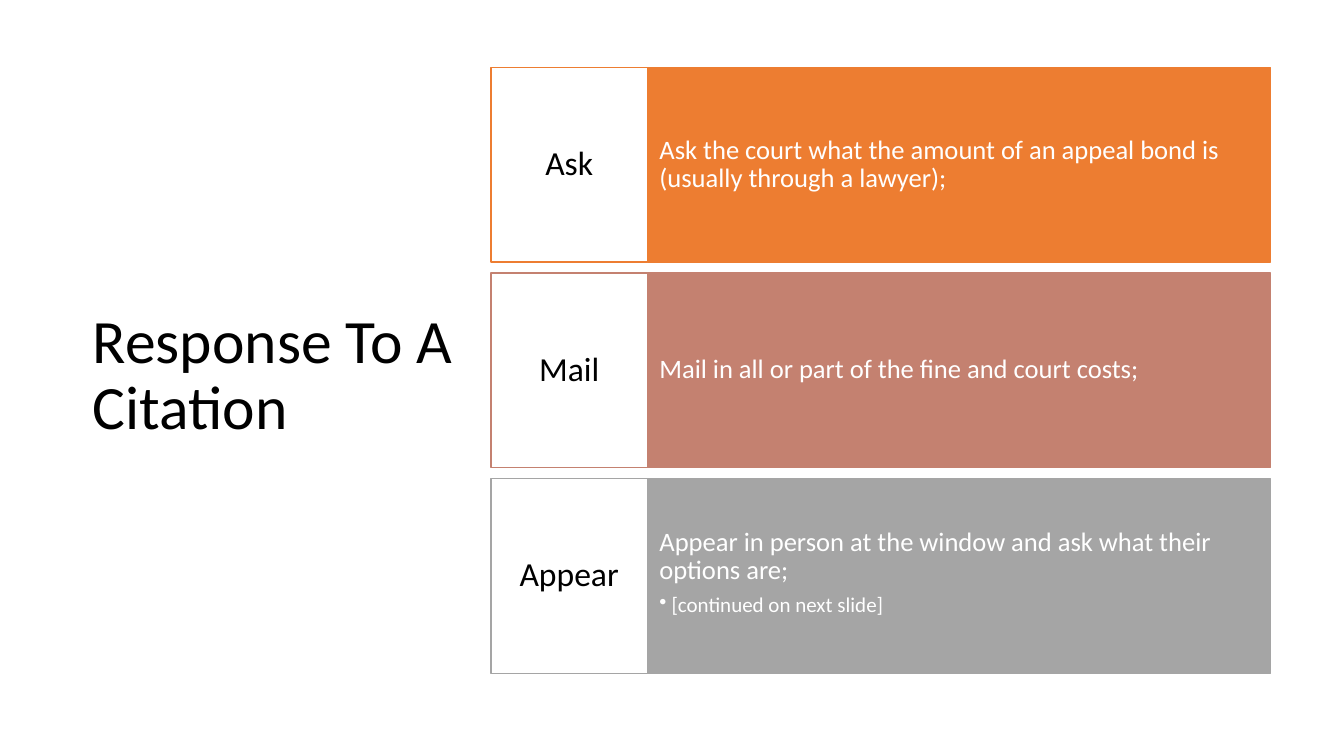
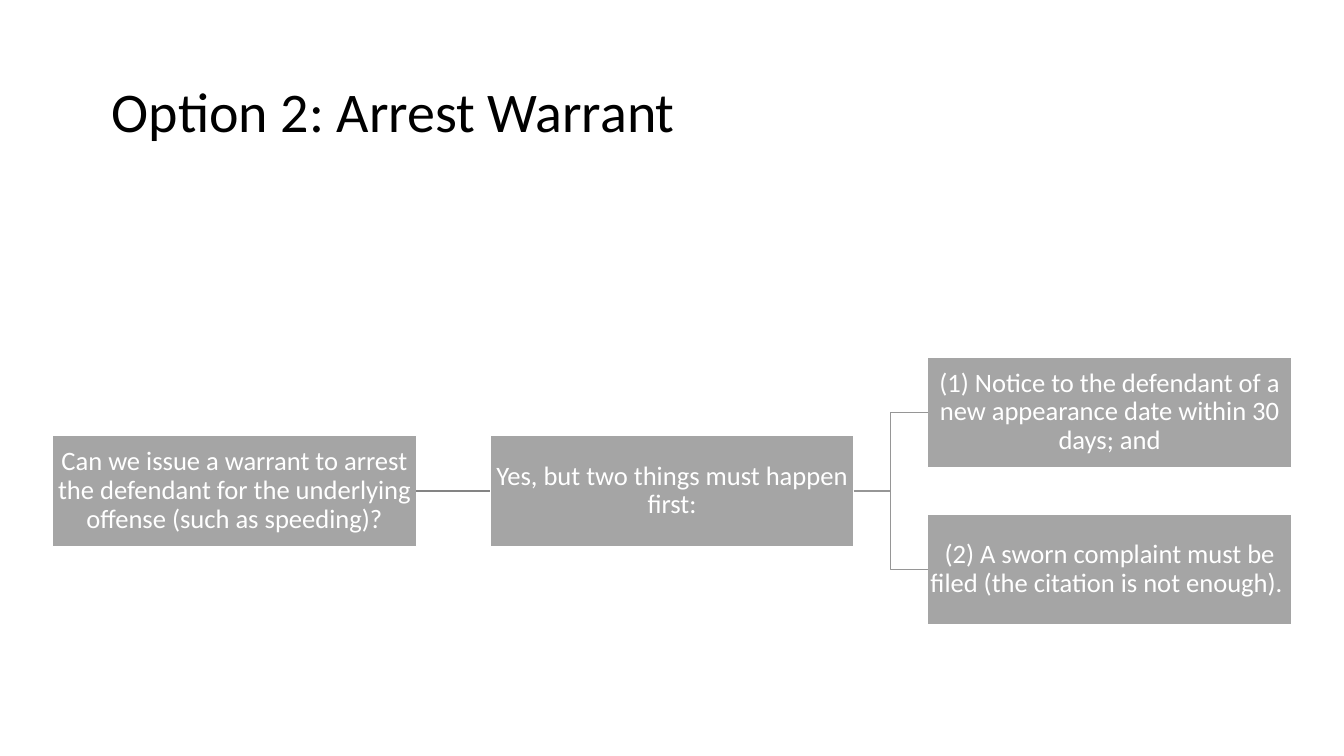
from lxml.etree import SubElement
from pptx import Presentation
from pptx.dml.color import RGBColor
from pptx.enum.shapes import MSO_CONNECTOR, MSO_SHAPE
from pptx.enum.text import MSO_ANCHOR, PP_ALIGN
from pptx.oxml.ns import qn
from pptx.util import Inches, Pt

FONT = "Calibri"
BLACK, WHITE = "000000", "FFFFFF"
ORANGE, ROSE, GRAY = "ED7D31", "C48170", "A5A5A5"
STEM, BRANCH = "848484", "969696"
LINE_SPACING = 0.9
LEFT_SITE, RIGHT_SITE = 1, 3

RESPONSES = [
    ("Ask", ORANGE,
     "Ask the court what the amount of an appeal bond is (usually through a lawyer);", None),
    ("Mail", ROSE, "Mail in all or part of the fine and court costs;", None),
    ("Appear", GRAY, "Appear in person at the window and ask what their options are;",
     "[continued on next slide]"),
]


def color(hex_code):
    return RGBColor.from_string(hex_code)


def write(paragraph, text, size, hex_code, align=PP_ALIGN.LEFT):
    paragraph.alignment = align
    paragraph.line_spacing = LINE_SPACING
    run = paragraph.add_run()
    run.text = text
    run.font.name = FONT
    run.font.size = Pt(size)
    run.font.color.rgb = color(hex_code)


def add_titled_slide(deck, text, size, left, top, width, height):
    slide = deck.slides.add_slide(deck.slide_layouts[5])
    title = slide.shapes.title
    title.left, title.top = Inches(left), Inches(top)
    title.width, title.height = Inches(width), Inches(height)
    title.text_frame.vertical_anchor = MSO_ANCHOR.MIDDLE
    write(title.text_frame.paragraphs[0], text, size, BLACK)
    return slide


def add_box(slide, left, top, width, height, fill, outline, insets):
    """Add a flat rectangle; insets are (horizontal, vertical) in inches."""
    box = slide.shapes.add_shape(MSO_SHAPE.RECTANGLE, Inches(left), Inches(top),
                                 Inches(width), Inches(height))
    box.shadow.inherit = False
    box.fill.solid()
    box.fill.fore_color.rgb = color(fill)
    box.line.color.rgb = color(outline)
    box.line.width = Pt(1)
    frame = box.text_frame
    frame.word_wrap = True
    frame.vertical_anchor = MSO_ANCHOR.MIDDLE
    frame.margin_left = frame.margin_right = Inches(insets[0])
    frame.margin_top = frame.margin_bottom = Inches(insets[1])
    return box


def add_bullet(frame, text):
    frame.paragraphs[-1].space_after = Pt(6)
    paragraph = frame.add_paragraph()
    write(paragraph, text, 15, WHITE)
    properties = paragraph._p.get_or_add_pPr()
    properties.set("marL", str(Inches(0.12)))
    properties.set("indent", str(Inches(-0.12)))
    SubElement(properties, qn("a:buChar"), char="•")


def add_response(slide, top, label, accent, detail, note):
    left, label_width, detail_width, height = 4.87, 1.55, 6.18, 1.93
    detail_box = add_box(slide, left + label_width, top, detail_width, height,
                         accent, accent, (0.12, 0.49))
    write(detail_box.text_frame.paragraphs[0], detail, 19, WHITE)
    if note:
        detail_box.text_frame.vertical_anchor = MSO_ANCHOR.TOP
        add_bullet(detail_box.text_frame, note)
    label_box = add_box(slide, left, top, label_width, height, WHITE, accent, (0.08, 0.19))
    write(label_box.text_frame.paragraphs[0], label, 24, BLACK, PP_ALIGN.CENTER)


def add_step(slide, column, top, text):
    step = add_box(slide, 0.52 + column * 4.34, top, 3.61, 1.1, GRAY, WHITE, (0.01, 0.01))
    write(step.text_frame.paragraphs[0], text, 19, WHITE, PP_ALIGN.CENTER)
    return step


def join(slide, source, target, route, hex_code):
    """Link the right side of source to the left side of target."""
    link = slide.shapes.add_connector(route, 0, 0, 0, 0)
    link.begin_connect(source, RIGHT_SITE)
    link.end_connect(target, LEFT_SITE)
    link.line.color.rgb = color(hex_code)
    link.line.width = Pt(1)
    SubElement(link._element.spPr, qn("a:effectLst"))


def build_response_slide(deck):
    slide = add_titled_slide(deck, "Response To A Citation", 44, 0.82, 0.67, 3.98, 6.13)
    for row, response in enumerate(RESPONSES):
        add_response(slide, 0.67 + row * 2.04, *response)


def build_warrant_slide(deck):
    slide = add_titled_slide(deck, "Option 2: Arrest Warrant", 40, 1.01, 0.41, 11.32, 1.45)
    question = add_step(slide, 0, 4.32, "Can we issue a warrant to arrest the defendant "
                                        "for the underlying offense (such as speeding)?")
    answer = add_step(slide, 1, 4.32, "Yes, but two things must happen first:")
    notice = add_step(slide, 2, 3.54, "(1) Notice to the defendant of a new appearance "
                                      "date within 30 days; and")
    complaint = add_step(slide, 2, 5.1, "(2) A sworn complaint must be filed "
                                        "(the citation is not enough). ")
    join(slide, question, answer, MSO_CONNECTOR.STRAIGHT, STEM)
    for condition in (notice, complaint):
        join(slide, answer, condition, MSO_CONNECTOR.ELBOW, BRANCH)


def main():
    deck = Presentation()
    deck.slide_width, deck.slide_height = Inches(13.33), Inches(7.5)
    build_response_slide(deck)
    build_warrant_slide(deck)
    deck.save("out.pptx")


if __name__ == "__main__":
    main()
